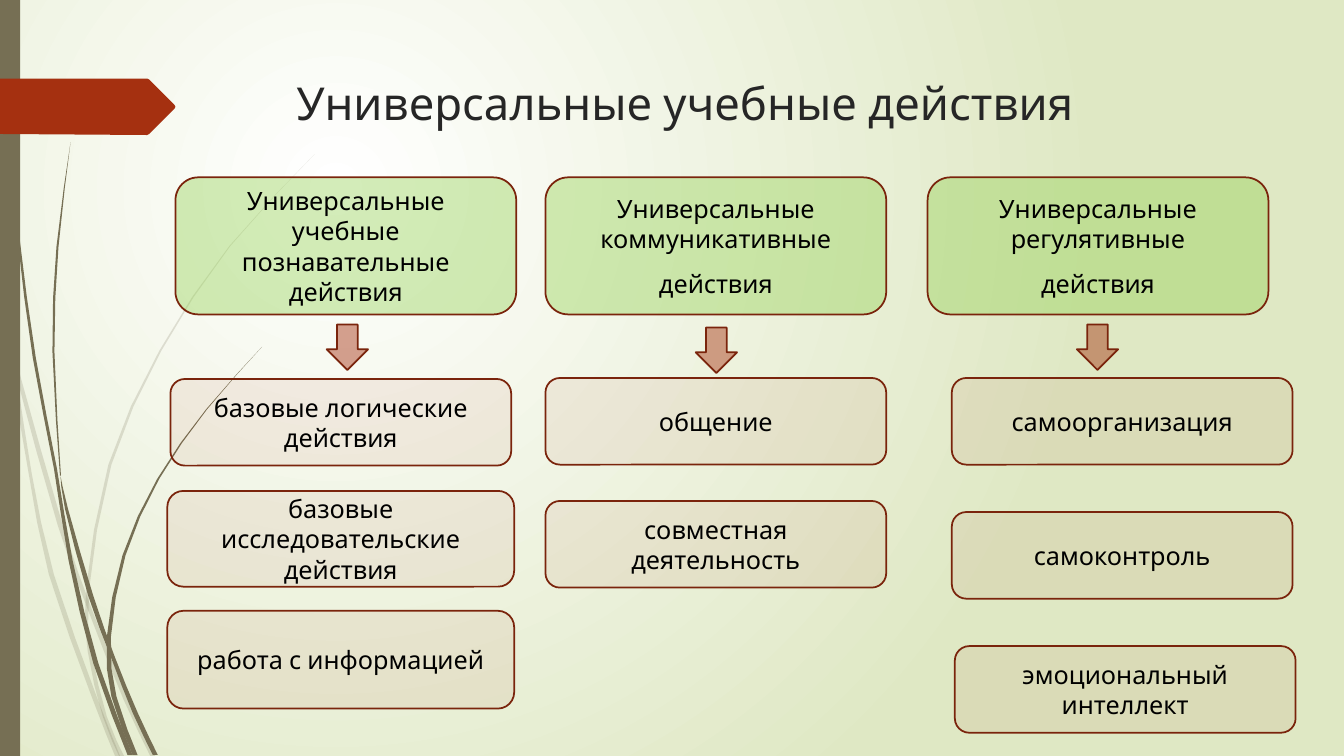
from lxml.etree import SubElement as Sub
from pptx import Presentation
from pptx.dml.color import RGBColor as RGB
from pptx.enum.shapes import MSO_SHAPE as Kind
from pptx.enum.text import MSO_ANCHOR as Anchor, PP_ALIGN as Align
from pptx.oxml import parse_xml
from pptx.oxml.ns import qn
from pptx.util import Pt

PX = 9144
FONT = "League Spartan"
RUST, EDGE, LIME, TAUPE = "A53010", "7A240C", "92D050", "766F54"


def hue(code):
    return RGB.from_string(code)


def paint(shape, code, alpha=100, edge=None):
    shape.shadow.inherit = False
    shape.fill.solid()
    shape.fill.fore_color.rgb = hue(code)
    if alpha < 100:
        tone = shape.fill._xPr.find(".//" + qn("a:srgbClr"))
        Sub(tone, qn("a:alpha"), val=str(alpha * 1000))
    if edge:
        shape.line.color.rgb = hue(edge)
        shape.line.width = Pt(1.25)
    else:
        shape.line.fill.background()


deck = Presentation()
deck.slide_width, deck.slide_height = 1333 * PX, 750 * PX
slide = deck.slides.add_slide(deck.slide_layouts[6])
shapes = slide.shapes

slide.background.fill.solid()
back = slide.background.fill._xPr
back.replace(back.find(qn("a:solidFill")), parse_xml(
    '<a:gradFill xmlns:a="http://schemas.openxmlformats.org/drawingml/2006/main" rotWithShape="1">'
    '<a:gsLst><a:gs pos="0"><a:srgbClr val="FFFFFF"/></a:gs>'
    '<a:gs pos="100000"><a:srgbClr val="DFE8C4"/></a:gs></a:gsLst>'
    '<a:path path="circle"><a:fillToRect l="50000" t="50000" r="100000" b="100000"/></a:path>'
    '</a:gradFill>'))

blades = [
    (20, [(1, 282, 2), (15, 376, 4), (30, 470, 3), (51, 570, 5), (93, 690, 5),
          (117, 751, 5)]),
    (20, [(14, 345, 0), (19, 376, 4), (60, 522, 5), (90, 607, 4), (125, 694, 5),
          (152, 751, 5)]),
    (20, [(312, 153, 0), (228, 244, 1), (159, 348, 2), (109, 461, 3), (87, 584, 3),
          (89, 646, 4), (104, 711, 4), (121, 751, 5)]),
    (100, [(3, 0, 1), (8, 110, 1), (18, 233, 2), (34, 355, 3), (55, 465, 3),
           (70, 556, 4), (95, 658, 5), (129, 749, 5)]),
    (100, [(60, 472, 0), (66, 505, 3), (90, 591, 5), (112, 652, 4), (134, 707, 5),
           (154, 749, 5)]),
    (100, [(70, 141, 0), (57, 245, 2), (53, 349, 2), (60, 472, 1)]),
    (100, [(260, 344, 0), (205, 406, 1), (157, 475, 2), (123, 551, 3), (108, 632, 4),
           (113, 691, 5), (134, 749, 5)]),
]
for alpha, knots in blades:
    ends = [knots[0], *knots, knots[-1]]
    spine = [knots[0]]
    for a, b, c, d in zip(ends, ends[1:], ends[2:], ends[3:]):
        mid = [(9 * (q + r) - p - s) / 16 for p, q, r, s in zip(a, b, c, d)]
        spine += [mid, c]
    left = [((x - w / 2) * PX, y * PX) for x, y, w in spine]
    right = [((x + w / 2) * PX, y * PX) for x, y, w in spine]
    pen = shapes.build_freeform(*left[0])
    pen.add_line_segments(left[1:] + right[::-1])
    paint(pen.convert_to_shape(), TAUPE, alpha)

paint(shapes.add_shape(Kind.RECTANGLE, 0, 0, 20 * PX, 750 * PX), TAUPE)

tag = [(146, 78), (148, 79), (173, 104), (174, 106), (173, 108), (148, 133),
       (146, 134), (0, 133)]
pen = shapes.build_freeform(0, 78 * PX)
pen.add_line_segments([(x * PX, y * PX) for x, y in tag])
paint(pen.convert_to_shape(), RUST)

title = shapes.add_textbox(284 * PX, 68 * PX, 975 * PX, 68 * PX).text_frame
title.word_wrap = True
title.vertical_anchor = Anchor.MIDDLE
title.text = "Универсальные учебные действия"
font = title.paragraphs[0].runs[0].font
font.name, font.size = FONT, Pt(32.4)
font.color.rgb = hue("262626")

heads = [
    (174, 176, 338, 136, "Универсальные учебные познавательные действия"),
    (541, 176, 338, 136, "Универсальные коммуникативные\nдействия"),
    (920, 176, 338, 136, "Универсальные регулятивные\nдействия"),
]
items = [
    (169, 376, 338, 86, "базовые логические действия"),
    (166, 487, 344, 95, "базовые исследовательские действия"),
    (166, 606, 344, 97, "работа с информацией"),
    (541, 375, 338, 86, "общение"),
    (541, 497, 338, 86, "совместная деятельность"),
    (944, 375, 338, 86, "самоорганизация"),
    (944, 508, 338, 86, "самоконтроль"),
    (947, 641, 338, 86, "эмоциональный интеллект"),
]
for group, code, alpha in [(heads, LIME, 40), (items, RUST, 7)]:
    for x, y, w, h, words in group:
        box = shapes.add_shape(Kind.ROUNDED_RECTANGLE, x * PX, y * PX, w * PX, h * PX)
        paint(box, code, alpha, EDGE)
        frame = box.text_frame
        frame.word_wrap = True
        frame.vertical_anchor = Anchor.MIDDLE
        frame.text = words
        for para in frame.paragraphs:
            para.alignment = Align.CENTER
            para.space_before = Pt(10)
            font = para.runs[0].font
            font.name, font.size = FONT, Pt(18)
            font.color.rgb = hue("000000")

for x, y in [(324, 322), (690, 325), (1068, 322)]:
    arrow = shapes.add_shape(Kind.DOWN_ARROW, x * PX, y * PX, 41 * PX, 45 * PX)
    paint(arrow, RUST, 45, EDGE)

deck.save("out.pptx")
